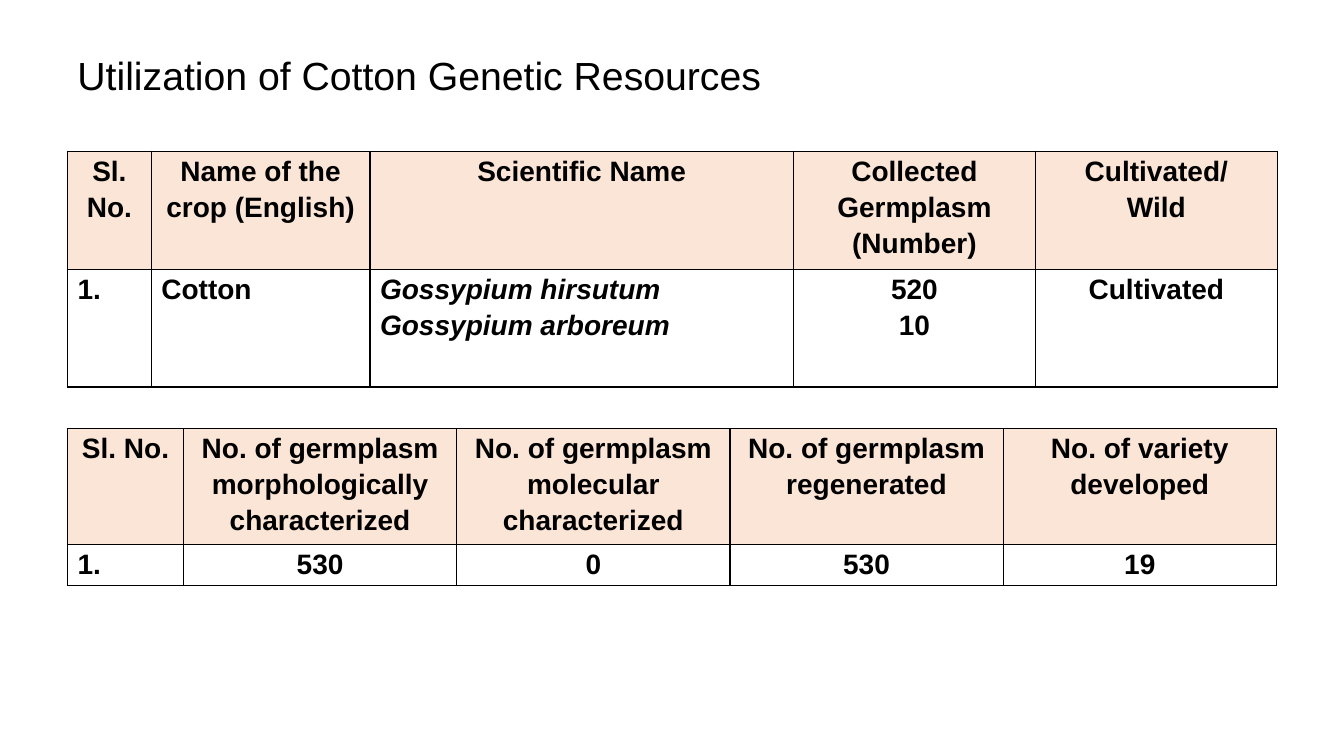
from pptx import Presentation
from pptx.dml.color import RGBColor
from pptx.enum.text import MSO_ANCHOR, PP_ALIGN
from pptx.oxml import parse_xml
from pptx.oxml.ns import nsdecls
from pptx.util import Inches, Pt

BLACK = RGBColor(0x00, 0x00, 0x00)
PEACH = RGBColor(0xFB, 0xE5, 0xD6)
LEFT, CENTER = PP_ALIGN.LEFT, PP_ALIGN.CENTER
MIDDLE = MSO_ANCHOR.MIDDLE
FONT = "Arial"


def format_text(tf, size, spacing, align, bold=False, italic=False):
    for p in tf.paragraphs:
        p.alignment = align
        p.line_spacing = spacing
        for r in p.runs:
            r.font.name = FONT
            r.font.size = Pt(size)
            r.font.bold = bold
            r.font.italic = italic
            r.font.color.rgb = BLACK


def add_borders(cell):
    tcPr = cell._tc.get_or_add_tcPr()
    for i, side in enumerate(("lnL", "lnR", "lnT", "lnB")):
        tcPr.insert(i, parse_xml(
            f'<a:{side} {nsdecls("a")} w="{Pt(1)}"><a:solidFill>'
            f'<a:srgbClr val="{BLACK}"/></a:solidFill></a:{side}>'))


prs = Presentation()
prs.slide_width = Inches(13.33)
prs.slide_height = Inches(7.5)
s = prs.slides.add_slide(prs.slide_layouts[6])

title = s.shapes.add_textbox(Inches(0.67), Inches(0.3), Inches(12), Inches(0.95))
tf = title.text_frame
tf.word_wrap = True
tf.vertical_anchor = MIDDLE
tf.text = "Utilization of Cotton Genetic Resources"
format_text(tf, 28, 0.9, LEFT)

collection = [
    ["Sl. No.", "Name of the crop (English)", "Scientific Name",
     "Collected Germplasm (Number)", "Cultivated/\nWild"],
    ["1.", "Cotton", "Gossypium hirsutum\nGossypium arboreum", "520\n10", "Cultivated"],
]
utilization = [
    ["Sl. No.", "No. of germplasm morphologically characterized",
     "No. of germplasm molecular characterized",
     "No. of germplasm regenerated", "No. of variety developed"],
    ["1.", "530", "0", "530", "19"],
]
tables = [
    (1.5, collection, [0.83, 2.17, 4.2, 2.4, 2.4], [1.17, 1.17], 3),
    (4.25, utilization, [1.15] + [2.71] * 4, [1.07, 0.41], 1),
]

for top, rows, widths, heights, left_columns in tables:
    frame = s.shapes.add_table(len(rows), len(widths), Inches(0.67), Inches(top),
                               Inches(sum(widths)), Inches(sum(heights)))
    table = frame.table
    table.horz_banding = False
    for column, width in zip(table.columns, widths):
        column.width = Inches(width)
    for i, values in enumerate(rows):
        table.rows[i].height = Inches(heights[i])
        for j, value in enumerate(values):
            cell = table.cell(i, j)
            cell.margin_left = cell.margin_right = Inches(0.1)
            cell.margin_top = cell.margin_bottom = 0
            if i == 0:
                cell.fill.solid()
                cell.fill.fore_color.rgb = PEACH
            else:
                cell.fill.background()
            add_borders(cell)
            cell.text_frame.text = value
            align = LEFT if i and j < left_columns else CENTER
            format_text(cell.text_frame, 20, 1.15, align, True,
                        value.startswith("Gossypium"))

prs.save("out.pptx")
